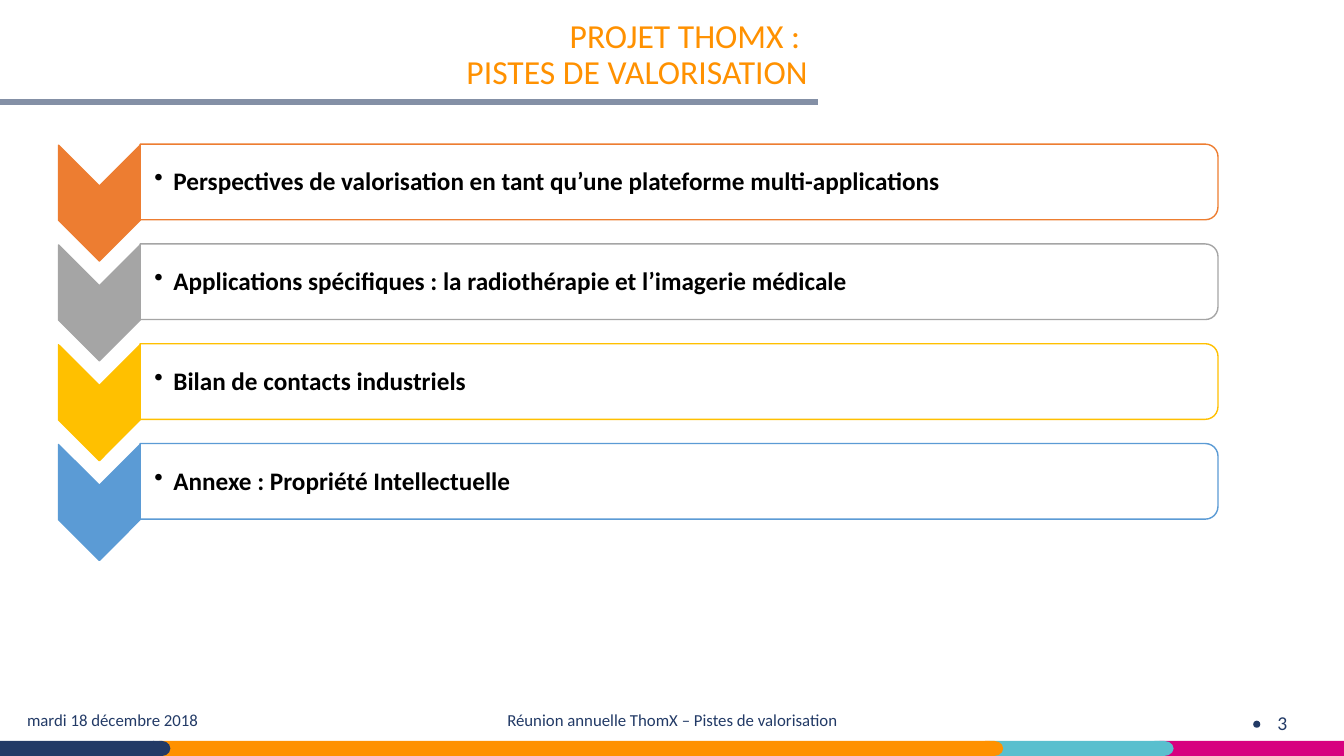
from lxml import etree
from pptx import Presentation
from pptx.dml.color import RGBColor
from pptx.enum.shapes import MSO_CONNECTOR, MSO_SHAPE
from pptx.enum.text import MSO_ANCHOR, PP_ALIGN
from pptx.oxml.ns import qn
from pptx.util import Inches, Pt

RECT = MSO_SHAPE.RECTANGLE
DELAY = MSO_SHAPE.FLOWCHART_DELAY
OVAL = MSO_SHAPE.OVAL
CHEVRON = MSO_SHAPE.CHEVRON
ROUND = MSO_SHAPE.ROUND_2_SAME_RECTANGLE
STRAIGHT = MSO_CONNECTOR.STRAIGHT
TOP, MIDDLE = MSO_ANCHOR.TOP, MSO_ANCHOR.MIDDLE
LEFT, CENTER, RIGHT = PP_ALIGN.LEFT, PP_ALIGN.CENTER, PP_ALIGN.RIGHT

THEME = {
    "font": "Calibri",
    "navy": "223A66", "orange": "FF9100", "teal": "59BFCE", "pink": "D7007F",
    "rule": "8490A6", "white": "FFFFFF", "black": "000000",
    "steps": ["ED7D31", "A5A5A5", "FFC000", "5B9BD5"],
    "title": 24, "item": 18, "page": 14, "foot": 12,
}

deck = Presentation()
deck.slide_width, deck.slide_height = Inches(13.33), Inches(7.5)
slide = deck.slides.add_slide(deck.slide_layouts[6])


def add_form(kind, box, fill, edge=None):
    form = slide.shapes.add_shape(kind, *map(Inches, box))
    form.shadow.inherit = False
    form.fill.solid()
    form.fill.fore_color.rgb = RGBColor.from_string(fill)
    if edge:
        form.line.color.rgb = RGBColor.from_string(edge)
        form.line.width = Pt(1)
    else:
        form.line.fill.background()
    return form


def add_text(box, lines, size, color, align=LEFT, anchor=TOP, bold=False):
    frame = slide.shapes.add_textbox(*map(Inches, box)).text_frame
    frame.word_wrap = True
    frame.vertical_anchor = anchor
    para = frame.paragraphs[0]
    para.alignment = align
    for place, line in enumerate(lines):
        if place:
            para.add_line_break()
        run = para.add_run()
        run.text = line
        run.font.name = THEME["font"]
        run.font.size = Pt(size)
        run.font.bold = bold
        run.font.color.rgb = RGBColor.from_string(color)
    return frame


add_form(OVAL, (12.43, 7.15, 0.07, 0.07), THEME["navy"])

rule = slide.shapes.add_connector(
    STRAIGHT, Inches(-0.06), Inches(1.01), Inches(8.11), Inches(1.01))
rule.line.color.rgb = RGBColor.from_string(THEME["rule"])
rule.line.width = Pt(4.25)
etree.SubElement(rule._element.spPr, qn("a:effectLst"))

bands = [
    (RECT, 9.81, 1.69, "teal"),
    (RECT, 11.5, 1.84, "pink"),
    (DELAY, 9.77, 0.18, "orange"),
    (DELAY, 11.45, 0.19, "teal"),
    (RECT, 1.58, 8.23, "orange"),
    (DELAY, 1.52, 0.17, "navy"),
    (RECT, -0.02, 1.55, "navy"),
]
for kind, left, width, color in bands:
    add_form(kind, (left, 7.35, width, 0.15), THEME[color])

title = add_text((0.72, 0, 7.39, 1.1), ["PROJET THOMX : ", "PISTES DE VALORISATION"],
                 THEME["title"], THEME["orange"], RIGHT, MIDDLE)
title.paragraphs[0].line_spacing = 0.9

add_text((12.57, 7, 0.93, 0.44), ["3"], THEME["page"], THEME["navy"])
add_text((0.17, 6.99, 3, 0.4), ["mardi 18 décembre 2018"], THEME["foot"], THEME["navy"])
add_text((4.42, 6.99, 4.5, 0.4), ["Réunion annuelle ThomX – Pistes de valorisation"],
         THEME["foot"], THEME["navy"], CENTER)

items = [
    "Perspectives de valorisation en tant qu’une plateforme multi-applications",
    "Applications spécifiques : la radiothérapie et l’imagerie médicale",
    "Bilan de contacts industriels",
    "Annexe : Propriété Intellectuelle",
]
for step, (item, color) in enumerate(zip(items, THEME["steps"])):
    drop = step * 0.99
    arrow = add_form(CHEVRON, (0.41, 1.61 + drop, 1.15, 0.81), color, color)
    arrow.rotation = 90

    panel = add_form(ROUND, (6.36, -3.54 + drop, 0.75, 10.69), THEME["white"], color)
    panel.rotation = 90
    tint = panel._element.spPr.find(qn("a:solidFill"))[0]
    etree.SubElement(tint, qn("a:alpha"), val="90000")

    frame = add_text((1.39, 1.47 + drop, 10.66, 0.68), [item],
                     THEME["item"], THEME["black"], LEFT, MIDDLE, True)
    frame.margin_left = Inches(0.14)
    frame.margin_top = frame.margin_right = frame.margin_bottom = Inches(0.01)
    para = frame.paragraphs[0]
    para.line_spacing = 0.9
    props = para._p.get_or_add_pPr()
    props.set("marL", str(Inches(0.19)))
    props.set("indent", str(Inches(-0.19)))
    etree.SubElement(props, qn("a:buChar"), char="•")

deck.save("out.pptx")
